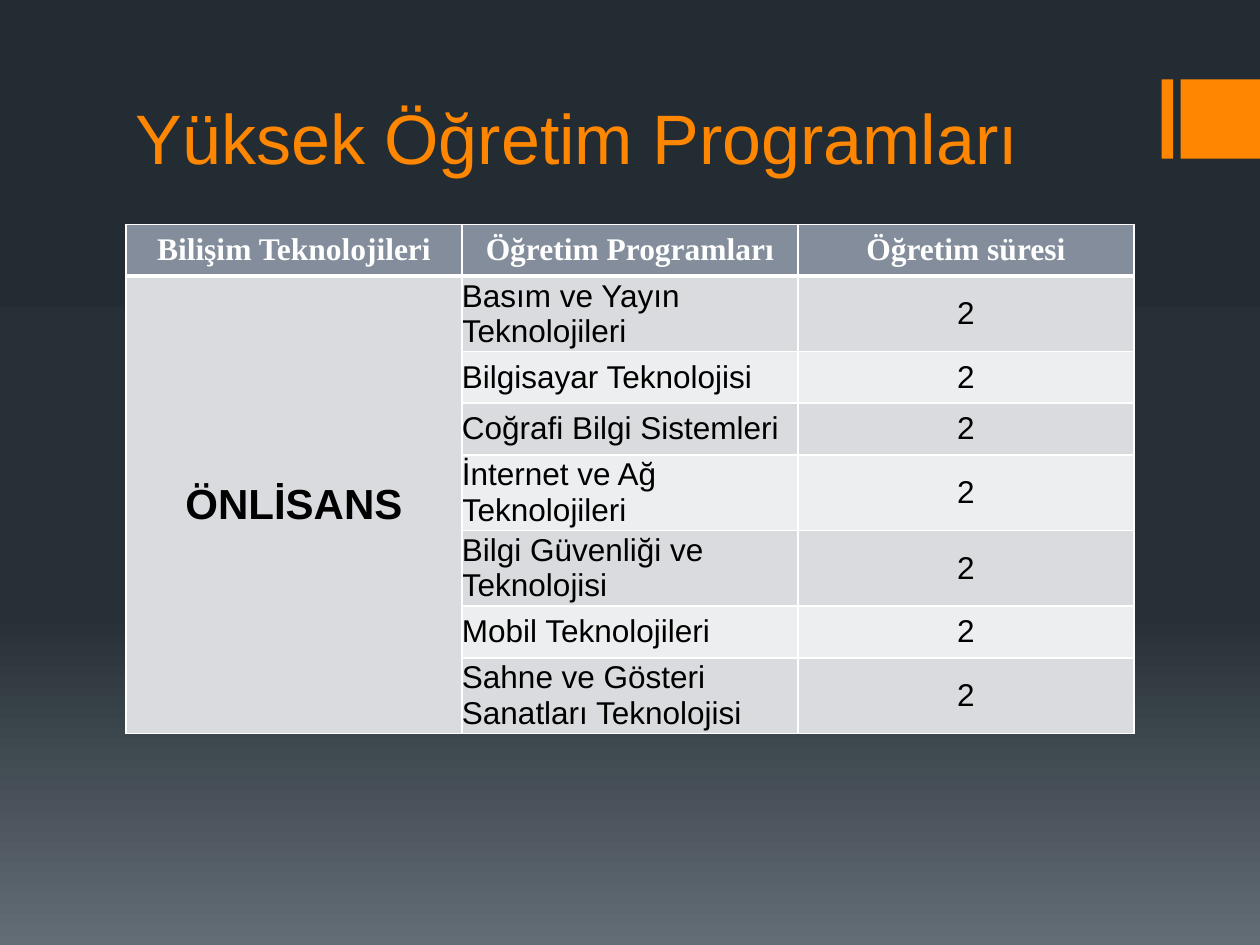
from copy import deepcopy

from lxml import etree
from pptx import Presentation
from pptx.dml.color import RGBColor
from pptx.enum.shapes import MSO_SHAPE
from pptx.enum.text import MSO_ANCHOR, PP_ALIGN
from pptx.oxml.ns import qn
from pptx.util import Inches, Pt

RECTANGLE = MSO_SHAPE.RECTANGLE
MIDDLE, BOTTOM = MSO_ANCHOR.MIDDLE, MSO_ANCHOR.BOTTOM
LEFT, CENTER = PP_ALIGN.LEFT, PP_ALIGN.CENTER

ORANGE, WHITE, BLACK = "FF8600", "FFFFFF", "000000"
HEADER_FILL = "838D9B"
BAND_FILLS = ["D9DBDE", "EDEEEF"]
BACKGROUND_STOPS = [(0, "242C33"), (0.65, "273037"), (1, "636D76")]

HEADERS = ["Bilişim Teknolojileri", "Öğretim Programları", "Öğretim süresi"]
DEGREE = "ÖNLİSANS"
PROGRAMS = [
    ("Basım ve Yayın Teknolojileri", "2"),
    ("Bilgisayar Teknolojisi", "2"),
    ("Coğrafi Bilgi Sistemleri", "2"),
    ("İnternet ve Ağ Teknolojileri", "2"),
    ("Bilgi Güvenliği ve Teknolojisi", "2"),
    ("Mobil Teknolojileri", "2"),
    ("Sahne ve Gösteri Sanatları Teknolojisi", "2"),
]
ROW_HEIGHT = 0.41


def color(hex_value):
    """Return the colour for a hex string."""
    return RGBColor.from_string(hex_value)


def paint_background(slide):
    """Fill the background with a vertical three-stop gradient."""
    fill = slide.background.fill
    fill.gradient()
    fill.gradient_angle = 270
    stop_list = slide.element.xpath(".//a:gsLst")[0]
    stop_list.append(deepcopy(stop_list[-1]))
    for stop, (position, hex_value) in zip(fill.gradient_stops, BACKGROUND_STOPS):
        stop.position = position
        stop.color.rgb = color(hex_value)


def add_accent(slide, left, width):
    """Add one orange block of the accent at the right edge."""
    accent = slide.shapes.add_shape(
        RECTANGLE, Inches(left), Inches(0.63), Inches(width), Inches(0.63))
    accent.shadow.inherit = False
    accent.fill.solid()
    accent.fill.fore_color.rgb = color(ORANGE)
    accent.line.fill.background()


def write(text_frame, text, size, hex_value, align=LEFT, font="Arial", bold=False):
    """Write one formatted run into the first paragraph."""
    paragraph = text_frame.paragraphs[0]
    paragraph.alignment = align
    run = paragraph.add_run()
    run.text = text
    run.font.name = font
    run.font.size = Pt(size)
    run.font.bold = bold
    run.font.color.rgb = color(hex_value)


def add_title(slide, text):
    """Add the slide title, resting on the bottom of its box."""
    title = slide.shapes.add_textbox(
        Inches(0.98), Inches(0.21), Inches(8), Inches(1.26))
    title.text_frame.word_wrap = True
    title.text_frame.vertical_anchor = BOTTOM
    write(title.text_frame, text, 40, ORANGE)


def style_cell(cell, fill_hex, bottom_width=1, top_width=1):
    """Give a cell its fill, white borders and zero margins."""
    cell.vertical_anchor = MIDDLE
    cell.margin_left = cell.margin_right = cell.margin_top = cell.margin_bottom = 0
    properties = cell._tc.get_or_add_tcPr()
    widths = {"a:lnL": 1, "a:lnR": 1, "a:lnT": top_width, "a:lnB": bottom_width}
    for tag, width in widths.items():
        border = etree.SubElement(properties, qn(tag), w=str(Pt(width)))
        border_fill = etree.SubElement(border, qn("a:solidFill"))
        etree.SubElement(border_fill, qn("a:srgbClr"), val=WHITE)
    cell.fill.solid()
    cell.fill.fore_color.rgb = color(fill_hex)


def add_program_table(slide):
    """Add the table of programs with the degree merged down the first column."""
    row_count = len(PROGRAMS) + 1
    table = slide.shapes.add_table(
        row_count, len(HEADERS), Inches(1), Inches(1.78),
        Inches(8), Inches(ROW_HEIGHT * row_count)).table
    for row in table.rows:
        row.height = Inches(ROW_HEIGHT)
    for column, header in enumerate(HEADERS):
        cell = table.cell(0, column)
        style_cell(cell, HEADER_FILL, bottom_width=3)
        write(cell.text_frame, header, 18, WHITE, CENTER, "Times New Roman", True)
    for index, (program, years) in enumerate(PROGRAMS):
        fills = [BAND_FILLS[0]] + [BAND_FILLS[index % 2]] * 2
        for column, fill_hex in enumerate(fills):
            style_cell(table.cell(index + 1, column), fill_hex,
                       top_width=3 if index == 0 else 1)
        write(table.cell(index + 1, 1).text_frame, program, 18, BLACK)
        write(table.cell(index + 1, 2).text_frame, years, 18, BLACK, CENTER)
    degree_cell = table.cell(1, 0)
    degree_cell.merge(table.cell(row_count - 1, 0))
    write(degree_cell.text_frame, DEGREE, 24, BLACK, CENTER, bold=True)


def main():
    """Build the slide and save it."""
    presentation = Presentation()
    presentation.slide_width = Inches(10)
    presentation.slide_height = Inches(7.5)
    slide = presentation.slides.add_slide(presentation.slide_layouts[6])
    paint_background(slide)
    add_accent(slide, 9.22, 0.09)
    add_accent(slide, 9.37, 0.63)
    add_title(slide, "Yüksek Öğretim Programları")
    add_program_table(slide)
    presentation.save("out.pptx")


if __name__ == "__main__":
    main()
